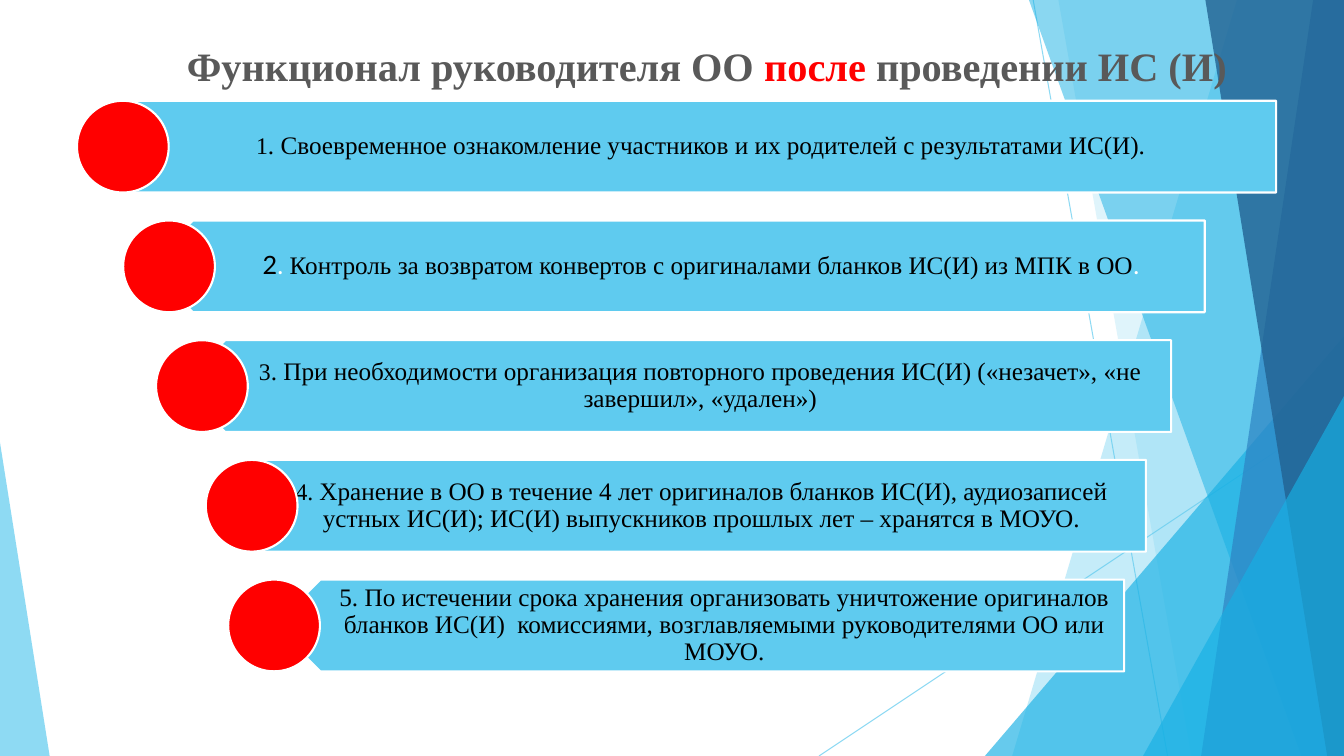
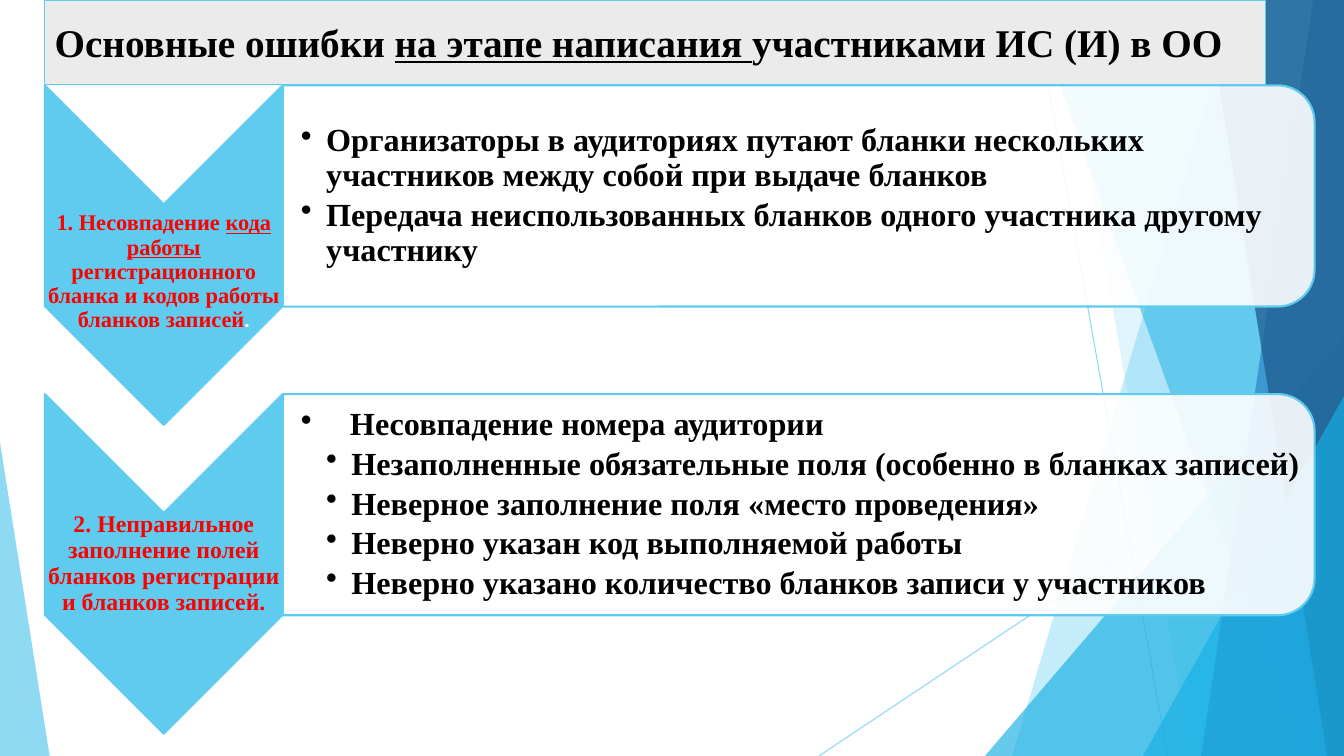
from lxml.etree import SubElement
from pptx import Presentation
from pptx.dml.color import RGBColor
from pptx.enum.shapes import MSO_CONNECTOR as Connector, MSO_SHAPE as Shape
from pptx.enum.text import MSO_ANCHOR as Anchor, PP_ALIGN as Align
from pptx.oxml.ns import qn
from pptx.util import Pt

WIDTH, HEIGHT = 960, 540
SERIF, SANS = "Times New Roman", "Lato"
SKY = RGBColor(0x5F, 0xCB, 0xEF)
CYAN = RGBColor(0x17, 0xB0, 0xE4)
BLUE = RGBColor(0x2E, 0x83, 0xC3)
NAVY = RGBColor(0x22, 0x62, 0x92)
RED = RGBColor(0xFF, 0x00, 0x00)
WHITE = RGBColor(0xFF, 0xFF, 0xFF)
BLACK = RGBColor(0x00, 0x00, 0x00)
GRAY = RGBColor(0x59, 0x59, 0x59)
PALE = RGBColor(0xEB, 0xEB, 0xEB)

RAYS = [((738, 0), (834, HEIGHT)), ((WIDTH, 290), (585, HEIGHT))]
FACETS = [
    ("facet", 883.5, 723, SKY, 36),
    ("facet", 756, 851, SKY, 20),
    ("triangle", (703.5, 240, 256.5, 300), 1, CYAN, 66),
    ("facet", 735, 929.5, CYAN, 50),
    ("facet", 938, 858, BLUE, 70),
    ("facet", 861, 948, NAVY, 80),
    ("triangle", (816.5, 283, 143.5, 257), 1, CYAN, 66),
    ("triangle", (0, 316, 35.5, 224), 0, SKY, 70),
]

BAND_TOP, BAND_PITCH, BAND_HEIGHT = 72, 85.5, 65.5
SMALL = {"size": 17}
DUTIES = [
    (54, 911.5, 55, [
        ("1", SMALL),
        (". Своевременное ознакомление участников и их родителей с результатами ИС(И).", {})]),
    (105, 860.5, 88, [
        ("2", {"name": SANS}),
        (". ", {"name": SANS, "color": WHITE}),
        ("Контроль за возвратом конвертов с оригиналами бланков ИС(И) из МПК в ОО", {}),
        (".", {"name": SANS, "color": WHITE})]),
    (128, 836.5, 111.5, [
        ("3", SMALL),
        (". При необходимости организация повторного проведения ИС(И) "
         "(«незачет», «не завершил», «удален»)", {})]),
    (148, 818.5, 147, [
        ("4. ", SMALL),
        ("Хранение в ОО в течение 4 лет оригиналов бланков ИС(И), аудиозаписей устных ИС(И); "
         "ИС(И) выпускников прошлых лет – хранятся в МОУО.", {})]),
    (196, 803, 163, [
        ("5. По истечении срока хранения организовать уничтожение оригиналов бланков ИС(И)  "
         "комиссиями, возглавляемыми руководителями ОО или МОУО.", {})]),
]

ERROR_TOP, ERROR_PITCH = 61, 220.5
ERRORS = [
    (16, 12, [
        ("1. Несовпадение ", {}),
        ("кода работы ", {"underline": True}),
        ("регистрационного бланка и кодов работы бланков записей", {}),
        (".", {"name": SANS, "color": WHITE})],
     [("Организаторы в аудиториях путают бланки нескольких участников между собой "
       "при выдаче бланков", 18, 18),
      ("Передача неиспользованных бланков одного участника другому участнику", 18, 18)]),
    (17, 0, [("2. Неправильное заполнение полей бланков регистрации и бланков записей.", {})],
     [("Несовпадение номера аудитории", 35, 35),
      ("Незаполненные обязательные поля (особенно в бланках записей)", 36, 18),
      ("Неверное заполнение поля «место проведения»", 36, 18),
      ("Неверно указан код выполняемой работы", 36, 18),
      ("Неверно указано количество бланков записи у участников", 36, 18)]),
]


def paint(shape, fill, alpha=100, line=None, weight=1.5):
    """Set fill, opacity and outline, without a shadow."""
    shape.shadow.inherit = False
    shape.fill.solid()
    shape.fill.fore_color.rgb = fill
    if alpha < 100:
        set_alpha(shape.fill._xPr, alpha)
    if line is None:
        shape.line.fill.background()
    else:
        shape.line.color.rgb = line
        shape.line.width = Pt(weight)


def set_alpha(parent, percent):
    """Make the solid colour under parent partly transparent."""
    color = parent.find(".//" + qn("a:srgbClr"))
    SubElement(color, qn("a:alpha")).set("val", str(percent * 1000))


def add_preset(slide, preset, box, fill, rotation=0, **style):
    """Add a preset shape that covers box once it is rotated."""
    left, top, width, height = box
    if rotation == 90:
        left, top = left + (width - height) / 2, top + (height - width) / 2
        width, height = height, width
    shape = slide.shapes.add_shape(preset, Pt(left), Pt(top), Pt(width), Pt(height))
    shape.rotation = rotation
    paint(shape, fill, **style)
    return shape


def style_font(font, name=None, size=None, color=None, bold=None, underline=None):
    """Set the given font properties."""
    if name:
        font.name = name
    if size:
        font.size = Pt(size)
    if color is not None:
        font.color.rgb = color
    if bold is not None:
        font.bold = bold
    if underline is not None:
        font.underline = underline


def write_runs(paragraph, runs, **base):
    """Write runs over a shared paragraph font."""
    style_font(paragraph.font, **base)
    for text, style in runs:
        run = paragraph.add_run()
        run.text = text
        style_font(run.font, **style)


def add_text_box(slide, box, insets):
    """Add a wrapping, vertically centred text box and return its frame."""
    frame = slide.shapes.add_textbox(*map(Pt, box)).text_frame
    frame.word_wrap = True
    frame.vertical_anchor = Anchor.MIDDLE
    (frame.margin_left, frame.margin_top,
     frame.margin_right, frame.margin_bottom) = map(Pt, insets)
    return frame


def add_backdrop(slide):
    """Draw the rays and translucent facets behind every slide."""
    for start, end in RAYS:
        ray = slide.shapes.add_connector(Connector.STRAIGHT, *map(Pt, start + end))
        ray.line.color.rgb = SKY
        ray.line.width = Pt(0.75)
        properties = ray._element.spPr
        set_alpha(properties, 70)
        SubElement(properties, qn("a:effectLst"))
    for kind, first, second, color, alpha in FACETS:
        if kind == "facet":
            builder = slide.shapes.build_freeform(Pt(first), 0)
            corners = [(WIDTH, 0), (WIDTH, HEIGHT), (second, HEIGHT)]
            builder.add_line_segments([(Pt(x), Pt(y)) for x, y in corners], close=True)
            paint(builder.convert_to_shape(), color, alpha)
        else:
            triangle = add_preset(slide, Shape.ISOSCELES_TRIANGLE, first, color, alpha=alpha)
            triangle.adjustments[0] = second


def add_duty(slide, box, circle_left, runs):
    """Draw a left-pointing band with its text and a red circle."""
    left, top, width, height = box
    add_preset(slide, Shape.PENTAGON, box, SKY, rotation=180, line=WHITE)
    tip = height / 4
    frame = add_text_box(slide, (left + tip, top, width - tip, height), (29, 5, 9.5, 5))
    paragraph = frame.paragraphs[0]
    paragraph.alignment = Align.CENTER
    paragraph.line_spacing = 0.9
    write_runs(paragraph, runs, name=SERIF, size=18, color=BLACK)
    add_preset(slide, Shape.OVAL, (circle_left, top, height, height), RED, line=WHITE)


def add_bullet(paragraph, margin, hanging):
    """Give a paragraph a round bullet and a hanging indent."""
    properties = paragraph._p.get_or_add_pPr()
    properties.set("marL", str(Pt(margin)))
    properties.set("indent", str(-Pt(hanging)))
    bullet = properties.makeelement(qn("a:buChar"), {"char": "•"})
    default_font = properties.find(qn("a:defRPr"))
    default_font.addprevious(bullet)


def add_error(slide, box, size, label_shift, label, points):
    """Draw a downward chevron with its label and a panel of bullets."""
    left, top, width, height = box
    label_width, panel_height = 170, 158
    add_preset(slide, Shape.CHEVRON, (left, top, label_width, height), SKY, rotation=90, line=SKY)
    label_box = (left, top + label_width / 2 + label_shift, label_width, height - label_width)
    paragraph = add_text_box(slide, label_box, (1, 1, 1, 1)).paragraphs[0]
    paragraph.alignment = Align.CENTER
    paragraph.line_spacing = 0.9
    write_runs(paragraph, label, name=SERIF, size=size, color=RED, bold=True)

    panel_left, panel_width = left + label_width, width - label_width
    add_preset(slide, Shape.ROUND_2_SAME_RECTANGLE, (panel_left, top, panel_width, panel_height),
               WHITE, rotation=90, alpha=90, line=SKY)
    frame = add_text_box(slide, (panel_left, top + 7.5, panel_width - 8, panel_height - 15),
                         (13, 1.5, 1.5, 1.5))
    for index, (text, margin, hanging) in enumerate(points):
        paragraph = frame.add_paragraph() if index else frame.paragraphs[0]
        paragraph.line_spacing = 0.9
        paragraph.space_after = Pt(3.5)
        write_runs(paragraph, [(text, {})], name=SERIF, size=23, color=BLACK, bold=True)
        add_bullet(paragraph, margin, hanging)


def build_duties(slide):
    """Build the slide of five duties."""
    add_backdrop(slide)
    paragraph = add_text_box(slide, (83, 24, 851, 45), (7, 3.5, 7, 3.5)).paragraphs[0]
    paragraph.alignment = Align.CENTER
    title = [("Функционал руководителя ОО ", {}), ("после", {"color": RED}),
             (" проведении ИС (И) ", {})]
    write_runs(paragraph, title, name=SERIF, size=28.8, color=GRAY, bold=True)
    for index, (left, right, circle_left, runs) in enumerate(DUTIES):
        box = (left, BAND_TOP + index * BAND_PITCH, right - left, BAND_HEIGHT)
        add_duty(slide, box, circle_left, runs)


def build_errors(slide):
    """Build the slide of two error groups."""
    add_backdrop(slide)
    for index, content in enumerate(ERRORS):
        add_error(slide, (32, ERROR_TOP + index * ERROR_PITCH, 907, 242.5), *content)
    heading = add_preset(slide, Shape.RECTANGLE, (32, 0, 872, 60.5), PALE, line=SKY, weight=1)
    heading.text_frame.word_wrap = True
    heading.text_frame.vertical_anchor = Anchor.MIDDLE
    paragraph = heading.text_frame.paragraphs[0]
    paragraph.alignment = Align.LEFT
    title = [("Основные ошибки ", {}), ("на этапе написания ", {"underline": True}),
             ("участниками ИС (И) в ОО", {})]
    write_runs(paragraph, title, name=SERIF, size=28, color=BLACK, bold=True)


def main():
    """Build and save the presentation."""
    presentation = Presentation()
    presentation.slide_width, presentation.slide_height = Pt(WIDTH), Pt(HEIGHT)
    for build in (build_duties, build_errors):
        build(presentation.slides.add_slide(presentation.slide_layouts[6]))
    presentation.save("out.pptx")


if __name__ == "__main__":
    main()
